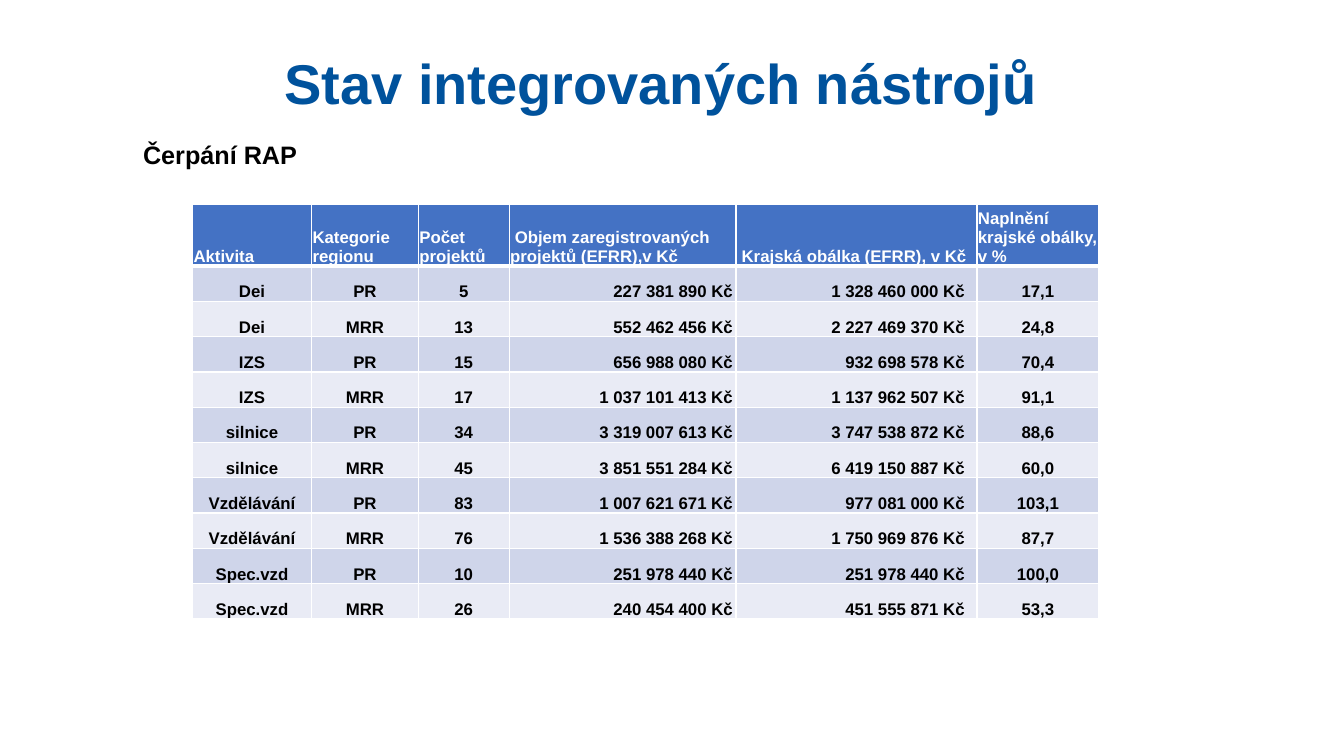
from lxml import etree
from pptx import Presentation
from pptx.dml.color import RGBColor
from pptx.enum.text import MSO_ANCHOR, MSO_AUTO_SIZE, PP_ALIGN
from pptx.oxml.ns import qn
from pptx.util import Inches, Pt

LEFT, CENTER, RIGHT = PP_ALIGN.LEFT, PP_ALIGN.CENTER, PP_ALIGN.RIGHT
TOP, MIDDLE, BOTTOM = MSO_ANCHOR.TOP, MSO_ANCHOR.MIDDLE, MSO_ANCHOR.BOTTOM
NO_AUTOFIT = MSO_AUTO_SIZE.NONE

COLORS = {
    "title": "00529C",
    "text": "000000",
    "white": "FFFFFF",
    "header": "4472C4",
    "odd_row": "CFD5EA",
    "even_row": "E9EBF5",
}
FONT = "Arial"
COLUMN_WIDTHS = [1.18, 1.06, 0.9, 2.25, 2.39, 1.21]
COLUMN_ALIGNMENTS = [CENTER, CENTER, CENTER, RIGHT, RIGHT, CENTER]
RIGHT_MARGINS = [0.01, 0.01, 0.01, 0.03, 0.12, 0.01]
HEADER_HEIGHT, ROW_HEIGHT = 0.51, 0.35

HEADERS = [
    "Aktivita",
    "Kategorie regionu",
    "Počet projektů",
    " Objem zaregistrovaných projektů (EFRR),v Kč",
    " Krajská obálka (EFRR), v Kč",
    "Naplnění krajské obálky, v %",
]
DRAWDOWN = [
    ("Dei", "PR", "5", "227 381 890 Kč", "1 328 460 000 Kč", "17,1"),
    ("Dei", "MRR", "13", "552 462 456 Kč", "2 227 469 370 Kč", "24,8"),
    ("IZS", "PR", "15", "656 988 080 Kč", "932 698 578 Kč", "70,4"),
    ("IZS", "MRR", "17", "1 037 101 413 Kč", "1 137 962 507 Kč", "91,1"),
    ("silnice", "PR", "34", "3 319 007 613 Kč", "3 747 538 872 Kč", "88,6"),
    ("silnice", "MRR", "45", "3 851 551 284 Kč", "6 419 150 887 Kč", "60,0"),
    ("Vzdělávání", "PR", "83", "1 007 621 671 Kč", "977 081 000 Kč", "103,1"),
    ("Vzdělávání", "MRR", "76", "1 536 388 268 Kč", "1 750 969 876 Kč", "87,7"),
    ("Spec.vzd", "PR", "10", "251 978 440 Kč", "251 978 440 Kč", "100,0"),
    ("Spec.vzd", "MRR", "26", "240 454 400 Kč", "451 555 871 Kč", "53,3"),
]


def write_text(text_frame, text, size, color, align=LEFT):
    """Fill a text frame with one bold paragraph and return it."""
    text_frame.text = text
    text_frame.word_wrap = True
    para = text_frame.paragraphs[0]
    para.alignment = align
    for span in para.runs:
        span.font.name = FONT
        span.font.size = Pt(size)
        span.font.bold = True
        span.font.color.rgb = RGBColor.from_string(COLORS[color])
    return para


def add_title(page, left, top, width, height):
    """Place and format the title placeholder."""
    title = page.shapes.title
    title.left, title.top = Inches(left), Inches(top)
    title.width, title.height = Inches(width), Inches(height)
    para = write_text(title.text_frame, "Stav integrovaných nástrojů", 40, "title")
    para.line_spacing = 0.9
    para.space_after = Pt(6)
    title.text_frame.vertical_anchor = MIDDLE
    title.text_frame.auto_size = NO_AUTOFIT


def add_subtitle(page, left, top, width, height):
    """Add the heading above the table."""
    box = page.shapes.add_textbox(
        Inches(left), Inches(top), Inches(width), Inches(height)
    )
    para = write_text(box.text_frame, "Čerpání RAP", 18, "text")
    para.line_spacing = 0.9
    box.text_frame.vertical_anchor = TOP


def set_borders(cell, bottom_width):
    """Draw white borders around a cell."""
    properties = cell._tc.get_or_add_tcPr()
    sides = [("a:lnL", 1), ("a:lnR", 1), ("a:lnT", 1), ("a:lnB", bottom_width)]
    for position, (side, width) in enumerate(sides):
        line = etree.Element(qn(side), w=str(Pt(width)))
        fill = etree.SubElement(line, qn("a:solidFill"))
        etree.SubElement(fill, qn("a:srgbClr"), val=COLORS["white"])
        properties.insert(position, line)


def format_cell(cell, text, fill, color, align, right_margin, bottom_width):
    """Write one table cell with its fill, margins and borders."""
    write_text(cell.text_frame, text, 12, color, align)
    cell.vertical_anchor = BOTTOM
    cell.margin_left = cell.margin_top = Inches(0.01)
    cell.margin_right, cell.margin_bottom = Inches(right_margin), 0
    cell.fill.solid()
    cell.fill.fore_color.rgb = RGBColor.from_string(COLORS[fill])
    set_borders(cell, bottom_width)


def add_drawdown_table(page, left, top):
    """Add the table of projects and funding by activity."""
    height = HEADER_HEIGHT + ROW_HEIGHT * len(DRAWDOWN)
    table = page.shapes.add_table(
        len(DRAWDOWN) + 1, len(HEADERS), Inches(left), Inches(top),
        Inches(sum(COLUMN_WIDTHS)), Inches(height),
    ).table
    for column, width in zip(table.columns, COLUMN_WIDTHS):
        column.width = Inches(width)
    for row in table.rows:
        row.height = Inches(ROW_HEIGHT)
    table.rows[0].height = Inches(HEADER_HEIGHT)

    for column, text in enumerate(HEADERS):
        format_cell(table.cell(0, column), text, "header", "white", LEFT, 0.01, 3)
    for row, values in enumerate(DRAWDOWN, 1):
        fill = "odd_row" if row % 2 else "even_row"
        for column, text in enumerate(values):
            format_cell(
                table.cell(row, column), text, fill, "text",
                COLUMN_ALIGNMENTS[column], RIGHT_MARGINS[column], 1,
            )


def main():
    """Build and save the deck."""
    deck = Presentation()
    deck.slide_width, deck.slide_height = Inches(13.33), Inches(7.5)
    page = deck.slides.add_slide(deck.slide_layouts[5])
    add_title(page, 2.72, 0.13, 7.88, 1.45)
    add_subtitle(page, 1.32, 1.37, 2.81, 0.49)
    add_drawdown_table(page, 1.91, 2.03)
    deck.save("out.pptx")


if __name__ == "__main__":
    main()
